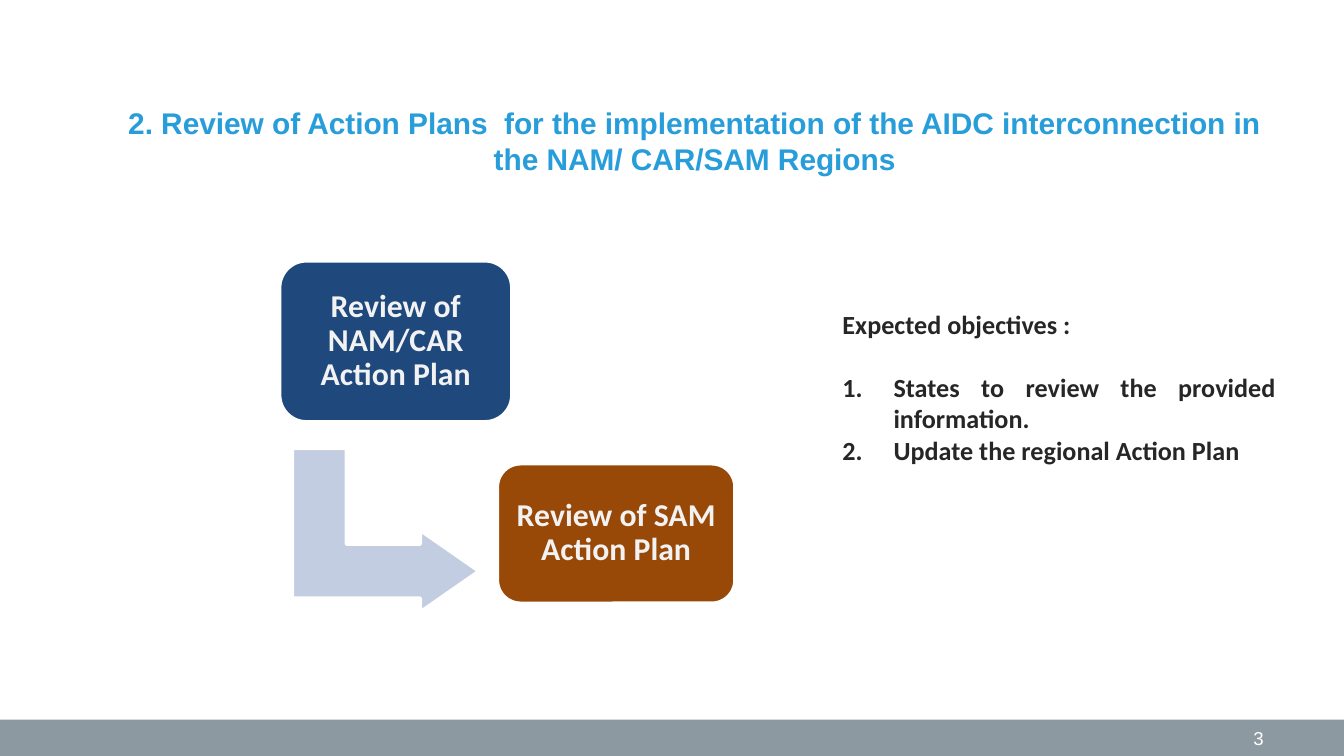
from lxml.etree import SubElement
from pptx import Presentation
from pptx.dml.color import RGBColor
from pptx.enum.shapes import MSO_SHAPE
from pptx.enum.text import MSO_ANCHOR, PP_ALIGN
from pptx.oxml.ns import qn
from pptx.util import Inches, Pt

THEME = {
    "title": {"font": "Arial", "size": 16, "color": "279DD9", "bold": True},
    "step": {"font": "Calibri", "size": 17, "color": "F2F2F2", "bold": True},
    "objective": {"font": "Calibri", "size": 14, "color": "262626", "bold": True},
    "page": {"font": "Arial", "size": 10, "color": "FFFFFF", "bold": False},
    "footer": "8C99A1",
    "arrow": "C2CDE1",
    "outline": "FFFFFF",
}

TITLE = ("2. Review of Action Plans  for the implementation of the AIDC "
         "interconnection in the NAM/ CAR/SAM Regions")
STEPS = [
    ("Review of NAM/CAR Action Plan", "1F497D", (2.08, 1.94, 1.73, 1.2)),
    ("Review of SAM Action Plan", "984807", (3.7, 3.45, 1.77, 1.04)),
]
OBJECTIVES_HEADING = "Expected objectives :"
OBJECTIVES = [
    "States to review the provided information.",
    "Update the regional Action Plan",
]
PAGE_NUMBER = "3"

SLIDE_WIDTH = 10
SLIDE_HEIGHT = SLIDE_WIDTH * 9 / 16
FOOTER_HEIGHT = 0.27
FOOTER_TOP = SLIDE_HEIGHT - FOOTER_HEIGHT
LIST_INDENT = 0.38


def place(part, box):
    part.left, part.top, part.width, part.height = map(Inches, box)


def write(paragraph, text, style, align):
    paragraph.alignment = align
    run = paragraph.add_run()
    run.text = text
    font = run.font
    font.name, font.size, font.bold = style["font"], Pt(style["size"]), style["bold"]
    font.color.rgb = RGBColor.from_string(style["color"])


def add_block(slide, kind, box, fill, outlined=True):
    block = slide.shapes.add_shape(kind, *map(Inches, box))
    block.shadow.inherit = False
    block.fill.solid()
    block.fill.fore_color.rgb = RGBColor.from_string(fill)
    if outlined:
        block.line.color.rgb = RGBColor.from_string(THEME["outline"])
        block.line.width = Pt(2)
    else:
        block.line.fill.background()
    return block


def add_text_area(slide, box):
    frame = slide.shapes.add_textbox(*map(Inches, box)).text_frame
    frame.word_wrap = True
    frame.vertical_anchor = MSO_ANCHOR.MIDDLE
    return frame


def number(paragraph):
    """Turn the paragraph into an automatically numbered list item."""
    properties = paragraph._p.get_or_add_pPr()
    properties.set("marL", str(Inches(LIST_INDENT)))
    properties.set("indent", str(-Inches(LIST_INDENT)))
    SubElement(properties, qn("a:buFont"), typeface="+mj-lt")
    SubElement(properties, qn("a:buAutoNum"), type="arabicPeriod")


def add_title(slide):
    title = slide.shapes.title
    place(title, (0.67, 0.73, 9, 0.94))
    title.text_frame.word_wrap = True
    title.text_frame.vertical_anchor = MSO_ANCHOR.TOP
    write(title.text_frame.paragraphs[0], TITLE, THEME["title"], PP_ALIGN.CENTER)


def add_footer(slide):
    add_block(slide, MSO_SHAPE.RECTANGLE,
              (0, FOOTER_TOP, SLIDE_WIDTH, FOOTER_HEIGHT), THEME["footer"], False)
    page = add_text_area(slide, (7.17, FOOTER_TOP, 2.33, FOOTER_HEIGHT))
    write(page.paragraphs[0], PAGE_NUMBER, THEME["page"], PP_ALIGN.RIGHT)


def add_steps(slide):
    arrow = add_block(slide, MSO_SHAPE.BENT_UP_ARROW,
                      (2.26, 3.25, 1.22, 1.39), THEME["arrow"])
    arrow.rotation = 90
    for index, ratio in enumerate((0.33, 0.25, 0.36)):
        arrow.adjustments[index] = ratio

    for label, fill, box in STEPS:
        step = add_block(slide, MSO_SHAPE.ROUNDED_RECTANGLE, box, fill)
        frame = step.text_frame
        frame.word_wrap = True
        frame.vertical_anchor = MSO_ANCHOR.MIDDLE
        frame.margin_left = frame.margin_right = Inches(0.07)
        frame.margin_top = frame.margin_bottom = Inches(0.07)
        frame.paragraphs[0].line_spacing = 0.9
        write(frame.paragraphs[0], label, THEME["step"], PP_ALIGN.CENTER)


def add_objectives(slide):
    frame = add_text_area(slide, (6.17, 1.56, 3.42, 3.16))
    frame.margin_bottom = Inches(0.57)
    heading = frame.paragraphs[0]
    heading.space_after = Pt(17)
    write(heading, OBJECTIVES_HEADING, THEME["objective"], PP_ALIGN.JUSTIFY)
    for objective in OBJECTIVES:
        item = frame.add_paragraph()
        number(item)
        write(item, objective, THEME["objective"], PP_ALIGN.JUSTIFY)


def main():
    deck = Presentation()
    deck.slide_width, deck.slide_height = Inches(SLIDE_WIDTH), Inches(SLIDE_HEIGHT)
    slide = deck.slides.add_slide(deck.slide_layouts[5])
    add_title(slide)
    add_footer(slide)
    add_steps(slide)
    add_objectives(slide)
    deck.save("out.pptx")


if __name__ == "__main__":
    main()
